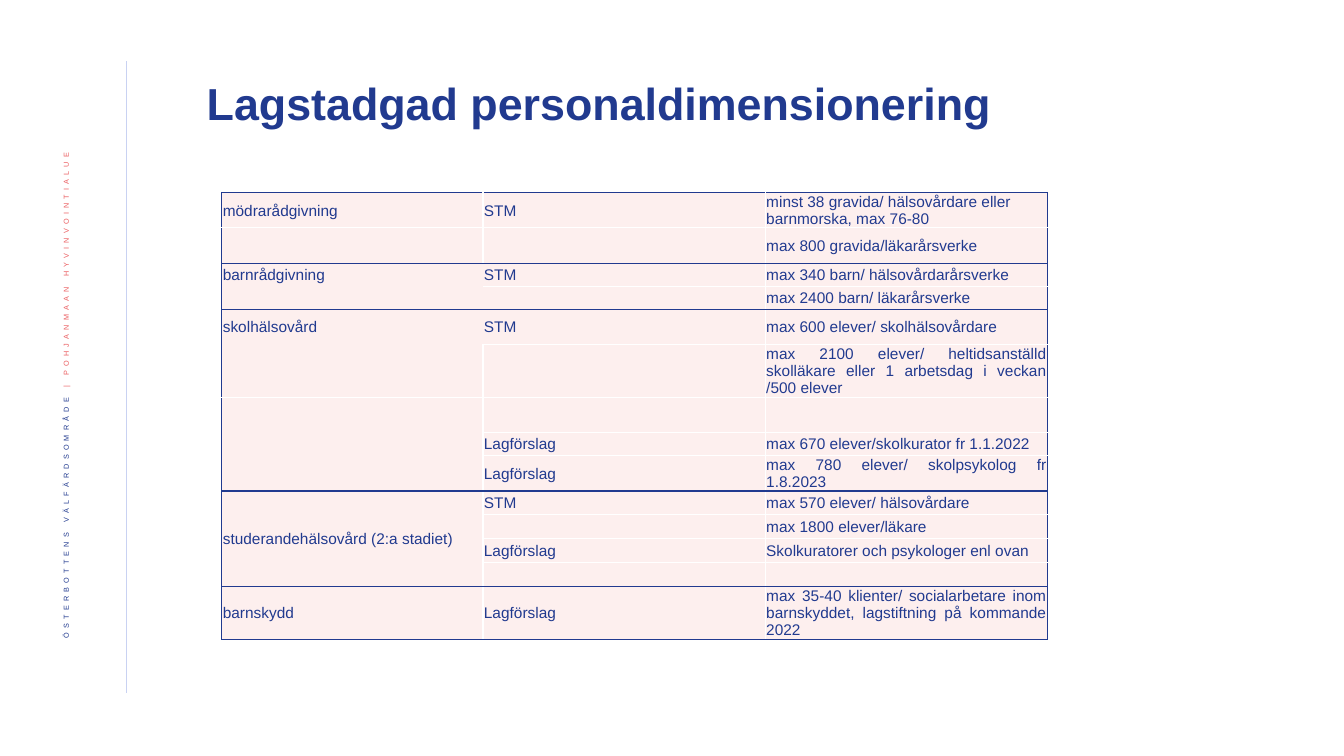
from lxml.etree import SubElement
from pptx import Presentation
from pptx.dml.color import RGBColor
from pptx.enum.shapes import MSO_CONNECTOR
from pptx.enum.text import MSO_ANCHOR, PP_ALIGN
from pptx.oxml.ns import qn
from pptx.util import Pt

HUES = {"navy": "213A8F", "coral": "EB5C5F", "rule": "C9D2F2",
        "blush": "FDEFEE", "white": "FFFFFF"}
LEFT, JUST = PP_ALIGN.LEFT, PP_ALIGN.JUSTIFY
COLS = [259, 280, 280]
ROWS = [
    (35, "mödrarådgivning", "STM",
     "minst 38 gravida/ hälsovårdare eller barnmorska, max 76-80", LEFT),
    (35, "", "", "max 800 gravida/läkarårsverke", LEFT),
    (23, "barnrådgivning", "STM", "max 340 barn/ hälsovårdarårsverke", JUST),
    (23, "", "", "max 2400 barn/ läkarårsverke", JUST),
    (35, "skolhälsovård", "STM", "max 600 elever/ skolhälsovårdare", JUST),
    (52, "", "", "max 2100 elever/ heltidsanställd skolläkare eller "
     "1 arbetsdag i veckan /500 elever", JUST),
    (35, "", "", "", LEFT),
    (23, "", "Lagförslag", "max 670 elever/skolkurator fr 1.1.2022", JUST),
    (35, "", "Lagförslag", "max 780 elever/ skolpsykolog fr 1.8.2023", JUST),
    (23, "studerandehälsovård (2:a stadiet)", "STM",
     "max 570 elever/ hälsovårdare", JUST),
    (24, "", "", "max 1800 elever/läkare", JUST),
    (24, "", "Lagförslag", "Skolkuratorer och psykologer enl ovan", JUST),
    (24, "", "", "", LEFT),
    (52, "barnskydd", "Lagförslag", "max 35-40 klienter/ socialarbetare inom "
     "barnskyddet, lagstiftning på kommande 2022", JUST),
]
STARTS = {0, 2, 4, 9, 13, len(ROWS)}
SPANS = {6: 3, 9: 4}
OPEN = {2, 3, 4}


def px(n):
    return n * 9144


def hue(name):
    return RGBColor.from_string(HUES[name])


def write(par, text, size=11, color="navy", bold=False, align=LEFT,
          lead=None, **marks):
    par.alignment = align
    if lead:
        par.line_spacing = lead
    if not text:
        SubElement(par._p, qn("a:endParaRPr"), sz=str(size * 100))
        return
    run = par.add_run()
    run.text = text
    font = run.font
    font.name, font.size, font.bold = "Arial", Pt(size), bold
    font.color.rgb = hue(color)
    for key, val in marks.items():
        font._element.set(key, str(val))


def edge(cell, side, color):
    line = SubElement(cell._tc.get_or_add_tcPr(), qn("a:ln" + side),
                      w=str(Pt(1)))
    if color:
        fill = SubElement(line, qn("a:solidFill"))
        SubElement(fill, qn("a:srgbClr"), val=HUES[color])
    else:
        SubElement(line, qn("a:noFill"))


def frame(cell, row, col):
    last = row + (SPANS.get(row, 1) if col == 0 else 1)
    sides = {
        "L": "navy" if col == 0 else "white",
        "R": "navy" if col == 2 else "white",
        "T": "navy" if row in STARTS else "white",
        "B": "navy" if last in STARTS else "white",
    }
    if row in OPEN and col < 2:
        sides["R" if col == 0 else "L"] = None
    if col == 0 and row in (2, 4):
        sides["B"] = None
    if col == 0 and row in (3, 5):
        sides["T"] = None
    for side, color in sides.items():
        edge(cell, side, color)


def band(slide, x, y, w, h):
    rule = slide.shapes.add_connector(
        MSO_CONNECTOR.STRAIGHT, px(x + w), px(y), px(x + w), px(y + h))
    rule.line.color.rgb = hue("rule")
    rule.line.width = Pt(0.5)
    SubElement(rule._element.spPr, qn("a:effectLst"))
    box = slide.shapes.add_textbox(px(x), px(y + 81), px(52), px(573))
    body = box.text_frame
    body.word_wrap = True
    body.vertical_anchor = MSO_ANCHOR.MIDDLE
    body._txBody.bodyPr.set("vert", "vert270")
    for text, color in (("ÖSTERBOTTENS VÄLFÄRDSOMRÅDE ", "navy"),
                        ("| POHJANMAAN HYVINVOINTIALUE", "coral")):
        write(body.paragraphs[0], text, size=9, color=color, lead=0.9,
              align=PP_ALIGN.RIGHT, baseline=30000, spc=300)


def head(slide, x, y, w, h):
    title = slide.shapes.title
    title.left, title.top, title.width, title.height = map(px, (x, y, w, h))
    title.text_frame.vertical_anchor = MSO_ANCHOR.MIDDLE
    write(title.text_frame.paragraphs[0], "Lagstadgad personaldimensionering",
          size=32, bold=True, lead=0.9)


def grid(slide, x, y, w, h):
    table = slide.shapes.add_table(len(ROWS), len(COLS), px(x), px(y),
                                   px(w), px(h)).table
    table.first_row = table.horz_banding = False
    for col, width in enumerate(COLS):
        table.columns[col].width = px(width)
    for row, (tall, *texts, align) in enumerate(ROWS):
        table.rows[row].height = px(tall)
        for col, text in enumerate(texts):
            cell = table.cell(row, col)
            cell.margin_left = cell.margin_right = cell.margin_top = px(1)
            cell.margin_bottom = 0
            cell.vertical_anchor = MSO_ANCHOR.MIDDLE
            frame(cell, row, col)
            cell.fill.solid()
            cell.fill.fore_color.rgb = hue("blush")
            write(cell.text_frame.paragraphs[0], text,
                  align=align if col == 2 else LEFT)
    for row, span in SPANS.items():
        table.cell(row, 0).merge(table.cell(row + span - 1, 0))


def main():
    deck = Presentation()
    deck.slide_width, deck.slide_height = px(1333), px(750)
    slide = deck.slides.add_slide(deck.slide_layouts[5])
    band(slide, 42, 61, 83, 627)
    head(slide, 195, 20, 1020, 171)
    grid(slide, 220, 191, sum(COLS), sum(row[0] for row in ROWS))
    deck.save("out.pptx")


if __name__ == "__main__":
    main()
